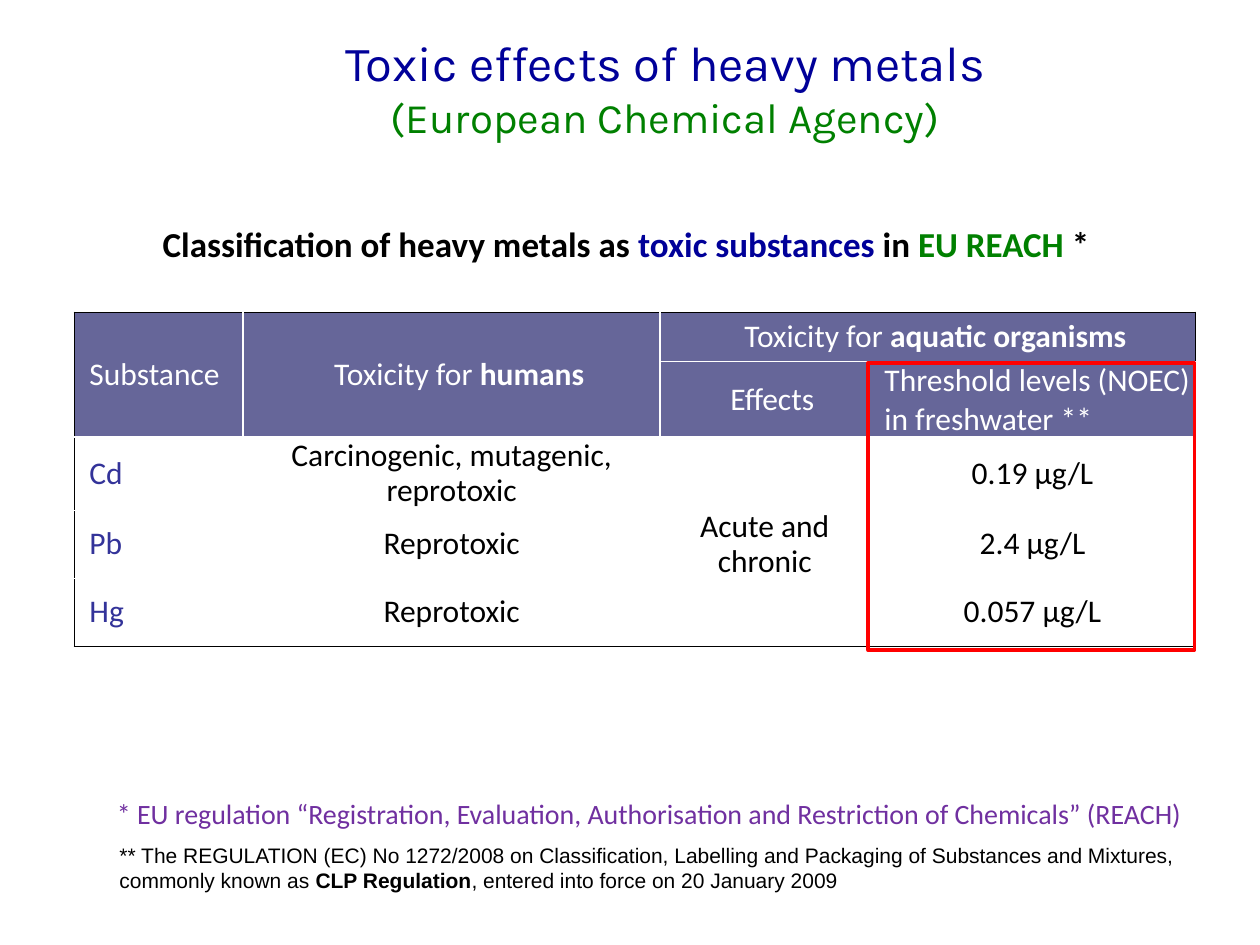
from dataclasses import dataclass

from lxml.etree import SubElement
from pptx import Presentation
from pptx.dml.color import RGBColor
from pptx.enum.shapes import MSO_SHAPE
from pptx.enum.text import MSO_ANCHOR, PP_ALIGN
from pptx.oxml.ns import qn
from pptx.util import Inches, Pt


@dataclass(frozen=True)
class Theme:
    navy: str = "000099"
    green: str = "008000"
    purple: str = "7030A0"
    indigo: str = "333399"
    slate: str = "666699"
    black: str = "000000"
    white: str = "FFFFFF"
    red: str = "FF0000"
    title_font: str = "Karla"
    body_font: str = "Calibri"
    note_font: str = "Arial"
    title_size: int = 28
    subtitle_size: int = 24
    heading_size: int = 20
    table_size: int = 18
    footnote_size: int = 16
    note_size: int = 12


theme = Theme()


def write(para, spans, font, size, align=PP_ALIGN.LEFT):
    """Fill a paragraph with (text, colour, bold) spans in one font and size."""
    para.alignment = align
    para.font.name = font
    para.font.size = Pt(size)
    for text, color, bold in spans:
        span = para.add_run()
        span.text = text
        span.font.bold = bold
        span.font.color.rgb = RGBColor.from_string(color)


def set_border(cell, side, color):
    """Draw a one-point line on a side: L, R, T or B."""
    line = SubElement(cell._tc.get_or_add_tcPr(), qn(f"a:ln{side}"), w=str(Pt(1)))
    fill = SubElement(line, qn("a:solidFill"))
    SubElement(fill, qn("a:srgbClr"), val=color)


deck = Presentation()
deck.slide_width, deck.slide_height = Inches(10), Inches(7.5)
page = deck.slides.add_slide(deck.slide_layouts[5])

# Title
title = page.shapes.title
title.left, title.top = Inches(2.01), Inches(0.28)
title.width, title.height = Inches(6.54), Inches(0.83)
title.text_frame.vertical_anchor = MSO_ANCHOR.MIDDLE
para = title.text_frame.paragraphs[0]
write(para, [("Toxic effects of heavy metals", theme.navy, False)],
      theme.title_font, theme.title_size, PP_ALIGN.CENTER)
para.add_line_break()
write(para, [("(European Chemical Agency)", theme.green, False)],
      theme.title_font, theme.title_size, PP_ALIGN.CENTER)
para.runs[-1].font.size = Pt(theme.subtitle_size)

# Heading and footnotes
heading = [("Classification of heavy metals as ", theme.black, True),
           ("toxic substances ", theme.navy, True),
           ("in ", theme.black, True),
           ("EU REACH", theme.green, True),
           (" * ", theme.black, True)]
clp_note = [("** The REGULATION (EC) No 1272/2008 on Classification, Labelling and "
             "Packaging of Substances and Mixtures, commonly known as ", theme.black, False),
            ("CLP Regulation", theme.black, True),
            (", entered into force on 20 January 2009", theme.black, False)]
reach_note = [("* EU regulation “Registration, Evaluation, Authorisation and "
               "Restriction of Chemicals” (REACH)", theme.purple, False)]
texts = [
    (0, 1.68, 10, 0.5, True, heading, theme.body_font, theme.heading_size, PP_ALIGN.CENTER),
    (0.85, 6.64, 9.13, 0.5, True, clp_note, theme.note_font, theme.note_size, PP_ALIGN.LEFT),
    (0.83, 6.27, 8.73, 0.37, False, reach_note, theme.body_font, theme.footnote_size,
     PP_ALIGN.LEFT),
]
for left, top, width, height, wrap, spans, font, size, align in texts:
    box = page.shapes.add_textbox(Inches(left), Inches(top), Inches(width), Inches(height))
    box.text_frame.word_wrap = wrap
    para = box.text_frame.paragraphs[0]
    write(para, spans, font, size, align)
    if spans is heading:
        para.line_spacing = 1.1

# Toxicity table: each cell is a list of (text, bold) spans
column_widths = [1.34, 3.31, 1.66, 2.59]
row_heights = [0.39, 0.6, 0.58, 0.54, 0.54]
rows = [
    [[("Substance", False)], [("Toxicity for ", False), ("humans", True)],
     [("Toxicity for ", False), ("aquatic organisms", True)], []],
    [[], [], [("Effects", False)], [("Threshold levels (NOEC) in freshwater **", False)]],
    [[("Cd", False)], [("Carcinogenic, mutagenic, reprotoxic", False)], [],
     [("0.19\u00a0µg/L", False)]],
    [[("Pb", False)], [("Reprotoxic", False)], [("Acute and chronic", False)],
     [("2.4\u00a0µg/L", False)]],
    [[("Hg", False)], [("Reprotoxic", False)], [], [("0.057\u00a0µg/L", False)]],
]
header_rows = 2
left_aligned = {(1, 3)}
table = page.shapes.add_table(len(rows), len(column_widths), Inches(0.59), Inches(2.48),
                              Inches(sum(column_widths)), Inches(sum(row_heights))).table
for column, width in zip(table.columns, column_widths):
    column.width = Inches(width)
for row, height in zip(table.rows, row_heights):
    row.height = Inches(height)
for first, last in [((0, 0), (1, 0)), ((0, 1), (1, 1)), ((0, 2), (0, 3))]:
    table.cell(*first).merge(table.cell(*last))

for r, row in enumerate(rows):
    for c, spans in enumerate(row):
        cell = table.cell(r, c)
        if cell.is_spanned:
            continue
        in_header = r < header_rows
        edges = {"L": c == 0, "R": c + cell.span_width == len(column_widths),
                 "T": r == 0, "B": r + cell.span_height == len(rows)}
        for side, is_outer in edges.items():
            set_border(cell, side, theme.black if is_outer else theme.white)
        cell.fill.solid()
        cell.fill.fore_color.rgb = RGBColor.from_string(
            theme.slate if in_header else theme.white)
        cell.vertical_anchor = MSO_ANCHOR.MIDDLE
        cell.margin_left = Inches(0.12 if in_header or c == 0 else 0)
        cell.margin_right = cell.margin_top = cell.margin_bottom = 0

        color = theme.white if in_header else theme.indigo if c == 0 else theme.black
        is_left = c == 0 or (r, c) in left_aligned
        para = cell.text_frame.paragraphs[0]
        write(para, [(text, color, bold) for text, bold in spans], theme.body_font,
              theme.table_size, PP_ALIGN.LEFT if is_left else PP_ALIGN.CENTER)
        if not in_header:
            para.line_spacing = 0.9

# Frame around the threshold levels
frame = page.shapes.add_shape(MSO_SHAPE.RECTANGLE, Inches(6.89), Inches(2.88),
                              Inches(2.59), Inches(2.28))
frame.shadow.inherit = False
frame.fill.background()
frame.line.color.rgb = RGBColor.from_string(theme.red)
frame.line.width = Pt(2)

deck.save("out.pptx")
